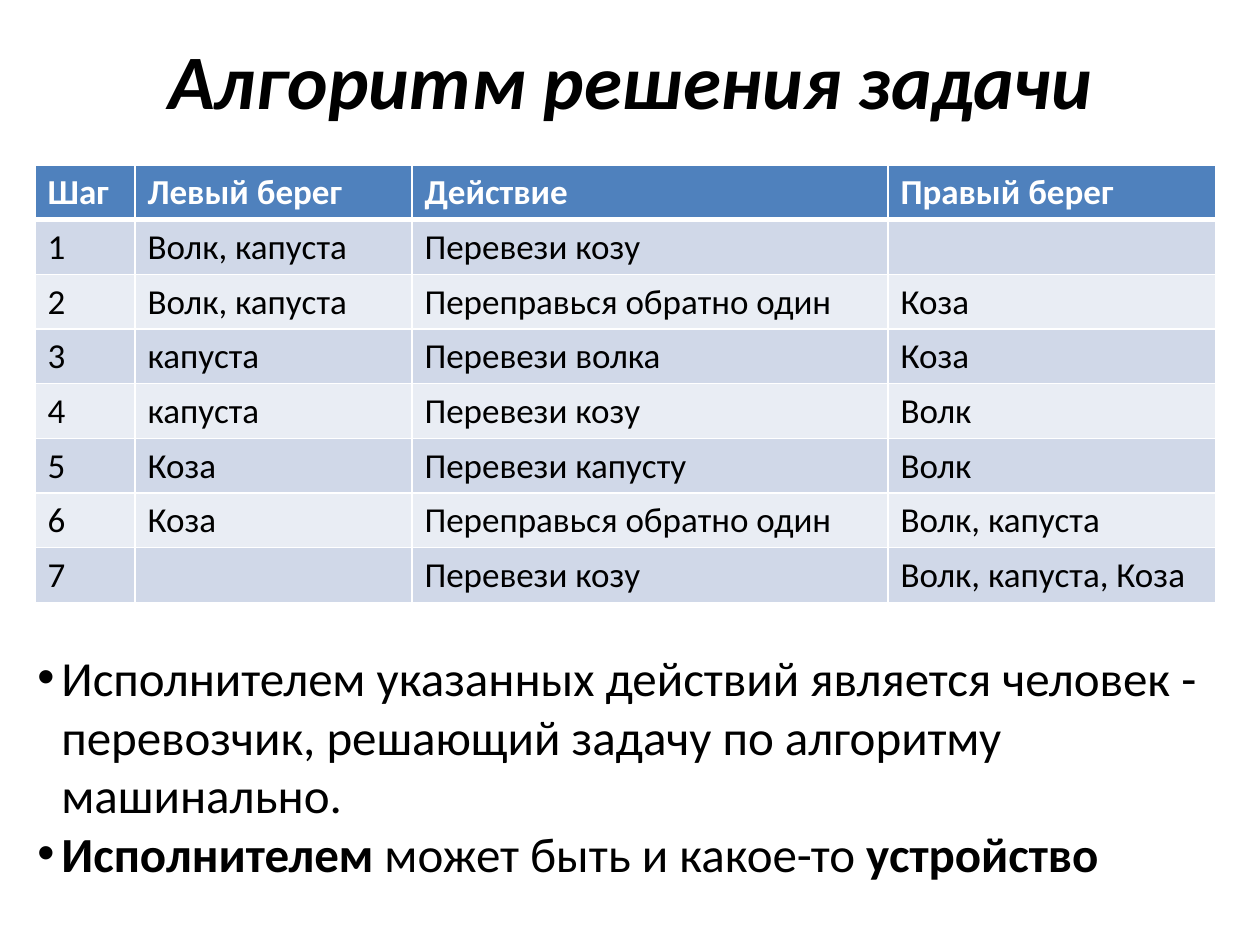
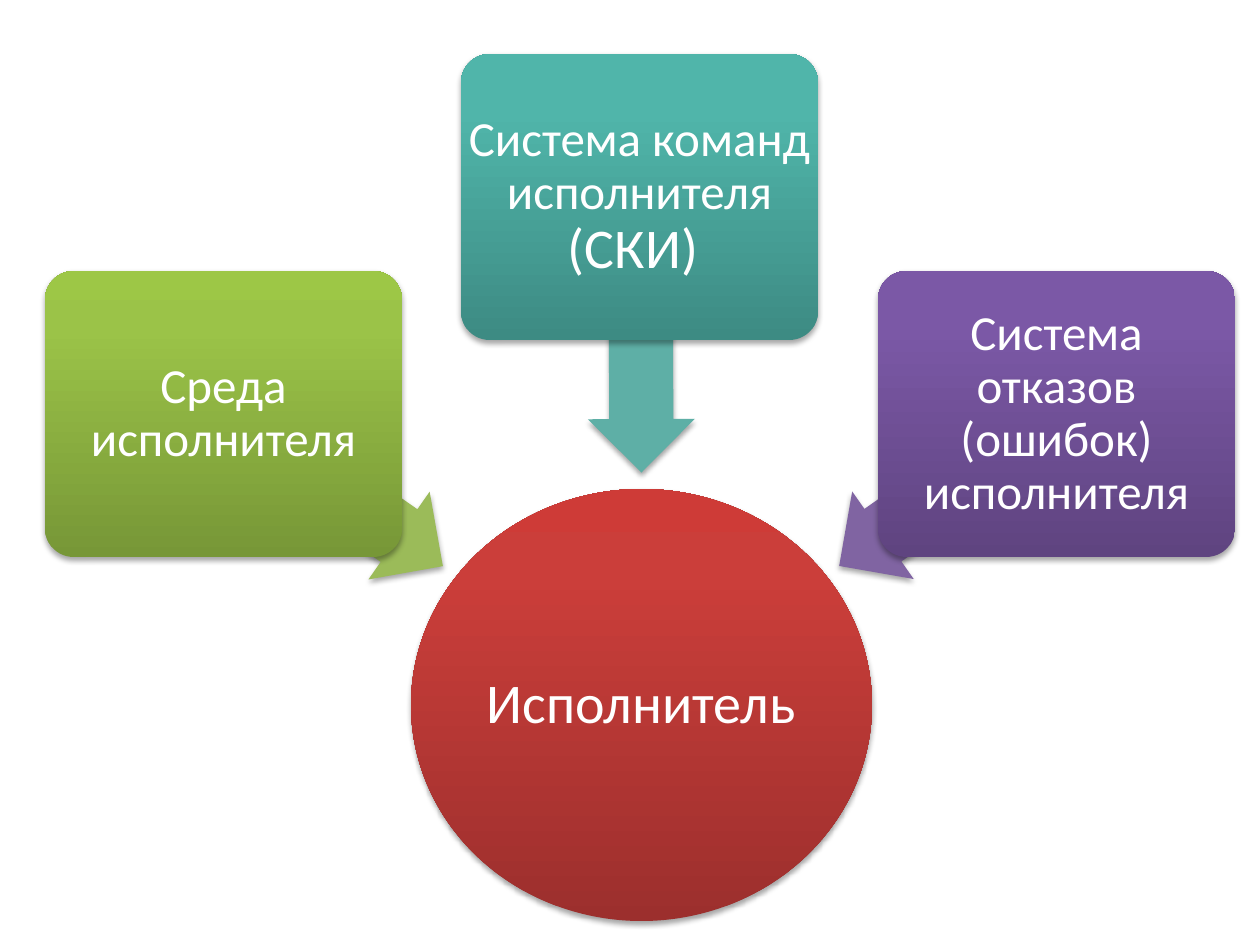
"""Builds two slides: the river-crossing algorithm and the parts of an executor."""
from dataclasses import dataclass

from lxml import etree
from pptx import Presentation
from pptx.dml.color import RGBColor
from pptx.enum.shapes import MSO_SHAPE
from pptx.enum.text import MSO_ANCHOR, PP_ALIGN
from pptx.oxml.ns import qn
from pptx.util import Pt

CENTER, LEFT = PP_ALIGN.CENTER, PP_ALIGN.LEFT
MIDDLE = MSO_ANCHOR.MIDDLE
OVAL, CARD, ARROW = MSO_SHAPE.OVAL, MSO_SHAPE.ROUNDED_RECTANGLE, MSO_SHAPE.LEFT_ARROW
PX = 914400 / 126
TITLE_ONLY, BLANK = 5, 6


@dataclass(frozen=True)
class Theme:
    """Colours and type sizes shared by the slides."""
    font: str = "Calibri"
    black: str = "000000"
    white: str = "FFFFFF"
    header: str = "4F81BD"
    bands: tuple = ("D0D8E8", "E9EDF4")
    red: tuple = ("9C2F2D", "CB3E3A", "CE3B37")
    green: tuple = ("779737", "9BC348", "9DC746")
    teal: tuple = ("3D8B83", "50B5AA", "4EB8AC")
    violet: tuple = ("5F4480", "7B58A6", "7C57A8")
    title: int = 44
    large: int = 32
    body: int = 28
    cell: int = 20


T = Theme()

TITLE = "Алгоритм решения задачи"
STEPS = [
    ("Шаг", "Левый берег", "Действие", "Правый берег"),
    ("1", "Волк, капуста", "Перевези козу", ""),
    ("2", "Волк, капуста", "Переправься обратно один", "Коза"),
    ("3", "капуста", "Перевези волка", "Коза"),
    ("4", "капуста", "Перевези козу", "Волк"),
    ("5", "Коза", "Перевези капусту", "Волк"),
    ("6", "Коза", "Переправься обратно один", "Волк, капуста"),
    ("7", "", "Перевези козу", "Волк, капуста, Коза"),
]
COLUMNS = (100, 277, 476, 328)
ROW_HEIGHT = 52
NOTES = [
    [("Исполнителем указанных действий является человек - перевозчик, "
      "решающий задачу по алгоритму машинально.", False)],
    [("Исполнителем ", True), ("может быть и какое-то", False), (" устройство", True)],
]

EXECUTOR = ("Исполнитель", (411, 489, 461, 432))
CARD_SIZE = (357, 286)
PARTS = [
    {"text": [("Среда исполнителя", T.body)], "at": (45, 271), "inset": 0,
     "colors": T.green, "arrow": (199, 436, 268, 107), "turn": 214.9, "arrow_color": "9BBB59"},
    {"text": [("Система команд исполнителя ", T.body), ("(СКИ) ", T.large)], "at": (461, 54),
     "inset": -4, "colors": T.teal, "arrow": (503, 281, 276, 107), "turn": 269.8,
     "arrow_color": "5EAFA6"},
    {"text": [("Система отказов (ошибок) исполнителя", T.body)], "at": (878, 271), "inset": 8,
     "colors": T.violet, "arrow": (815, 436, 266, 107), "turn": 324.9, "arrow_color": "8064A2"},
]


def px(*values):
    """Turn pixels into EMU."""
    return [round(v * PX) for v in values]


def add(parent, tag, **attrs):
    """Append a drawing element with the given attributes."""
    return etree.SubElement(parent, qn(tag), {k: str(v) for k, v in attrs.items()})


def style(p, size, color, align=LEFT, bold=None, italic=None):
    """Format a whole paragraph."""
    p.alignment = align
    f = p.font
    f.name, f.size, f.bold, f.italic = T.font, Pt(size), bold, italic
    f.color.rgb = RGBColor.from_string(color)


def set_borders(cell, header):
    """Draw white cell borders, with a heavy line under the header."""
    tcPr = cell._tc.get_or_add_tcPr()
    for i, side in enumerate("LRTB"):
        width = Pt(3 if header and side == "B" else 1)
        ln = add(tcPr, f"a:ln{side}", w=width)
        add(add(ln, "a:solidFill"), "a:srgbClr", val=T.white)
        tcPr.insert(i, ln)


def add_steps(s):
    """Add the table of crossing steps."""
    size = (sum(COLUMNS), ROW_HEIGHT * len(STEPS))
    table = s.shapes.add_table(len(STEPS), len(COLUMNS), *px(35, 165, *size)).table
    for column, width in zip(table.columns, COLUMNS):
        column.width = px(width)[0]
    for i, row in enumerate(STEPS):
        header = i == 0
        for j, text in enumerate(row):
            cell = table.cell(i, j)
            cell.text = text
            cell.fill.solid()
            cell.fill.fore_color.rgb = RGBColor.from_string(
                T.header if header else T.bands[(i - 1) % 2])
            style(cell.text_frame.paragraphs[0], T.cell,
                  T.white if header else T.black, bold=header)
            set_borders(cell, header)


def add_notes(s):
    """Add the bulleted notes under the table."""
    tf = s.shapes.add_textbox(*px(25, 641, 1201, 251)).text_frame
    tf.word_wrap = True
    for i, runs in enumerate(NOTES):
        p = tf.add_paragraph() if i else tf.paragraphs[0]
        for text, bold in runs:
            r = p.add_run()
            r.text, r.font.bold = text, bold
        pPr = p._p.get_or_add_pPr()
        indent = px(24)[0]
        pPr.set("marL", str(indent))
        pPr.set("indent", str(-indent))
        add(pPr, "a:buFont", typeface="Arial")
        add(pPr, "a:buChar", char="•")
        style(p, T.body, T.black)


def add_figure(s, kind, box, colors):
    """Add a shadowed shape with a solid or upward gradient fill."""
    sp = s.shapes.add_shape(kind, *px(*box))
    sp.line.fill.background()
    if isinstance(colors, str):
        sp.fill.solid()
        sp.fill.fore_color.rgb = RGBColor.from_string(colors)
    else:
        sp.fill.gradient()
        grad = sp._element.spPr.find(qn("a:gradFill"))
        for child in list(grad):
            grad.remove(child)
        stops = add(grad, "a:gsLst")
        for pos, color in zip((0, 80000, 100000), colors):
            add(add(stops, "a:gs", pos=pos), "a:srgbClr", val=color)
        add(grad, "a:lin", ang=270 * 60000, scaled=0)
    sp.shadow.inherit = False
    shadow = add(sp._element.spPr.find(qn("a:effectLst")), "a:outerShdw", blurRad=Pt(3.1),
                 dist=Pt(1.8), dir=90 * 60000, rotWithShape=0)
    add(add(shadow, "a:srgbClr", val=T.black), "a:alpha", val=35000)
    return sp


def set_label(sp, runs, inset=0):
    """Write centred white text into a shape."""
    tf = sp.text_frame
    tf.word_wrap, tf.vertical_anchor = True, MIDDLE
    tf.margin_left = tf.margin_right = px(inset)[0]
    tf.margin_top = tf.margin_bottom = 0
    p = tf.paragraphs[0]
    p.line_spacing = 0.9
    style(p, runs[0][1], T.white, CENTER)
    for text, size in runs:
        r = p.add_run()
        r.text, r.font.size = text, Pt(size)


def build_algorithm(prs):
    """Build the slide with the step table."""
    s = prs.slides.add_slide(prs.slide_layouts[TITLE_ONLY])
    title = s.shapes.title
    title.left, title.top, title.width, title.height = px(64, 0, 1134, 157)
    title.text_frame.text = TITLE
    title.text_frame.vertical_anchor = MIDDLE
    style(title.text_frame.paragraphs[0], T.title, T.black, CENTER, True, True)
    add_notes(s)
    add_steps(s)


def build_executor(prs):
    """Build the diagram of the executor and its parts."""
    s = prs.slides.add_slide(prs.slide_layouts[BLANK])
    name, box = EXECUTOR
    set_label(add_figure(s, OVAL, box, T.red), [(name, T.large)])
    for part in PARTS:
        arrow = add_figure(s, ARROW, part["arrow"], part["arrow_color"])
        arrow.rotation = part["turn"]
        arrow.adjustments[0], arrow.adjustments[1] = 0.6, 0.5
        card = add_figure(s, CARD, part["at"] + CARD_SIZE, part["colors"])
        card.adjustments[0] = 0.1
        set_label(card, part["text"], part["inset"])


def main():
    """Build and save the presentation."""
    prs = Presentation()
    prs.slide_width, prs.slide_height = px(1260, 945)
    build_algorithm(prs)
    build_executor(prs)
    prs.save("out.pptx")


if __name__ == "__main__":
    main()
